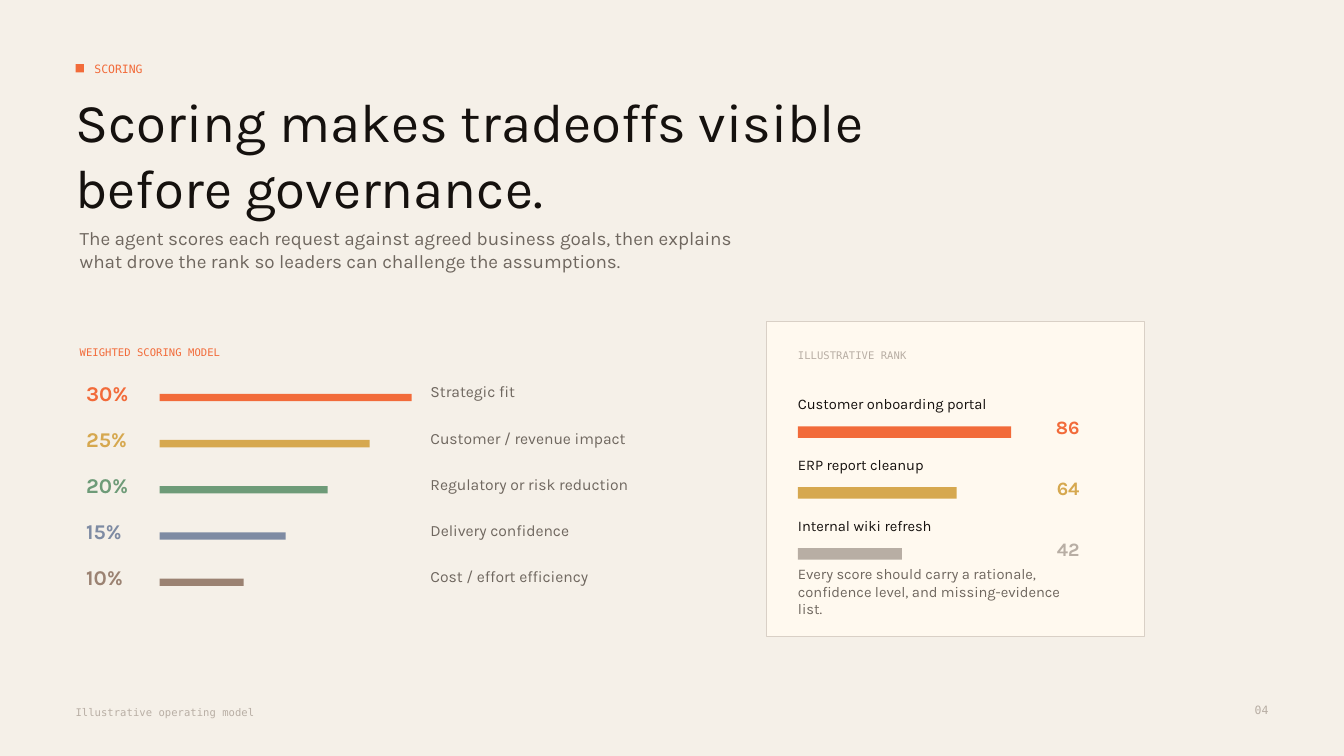
from pptx import Presentation
from pptx.dml.color import RGBColor as RGB
from pptx.enum.shapes import MSO_SHAPE as SHAPE
from pptx.enum.text import MSO_ANCHOR as ANCHOR, PP_ALIGN as ALIGN
from pptx.util import Inches, Pt

WIDTH, HEIGHT = Inches(13.33), Inches(7.5)
COLS, ROWS = 1280, 720
SANS, MONO = "Karla", "DejaVu Sans Mono"
COLORS = {
    "paper": "F5F0E8", "card": "FFF9EF", "edge": "D9D0C6",
    "ink": "15110E", "body": "6F675F", "muted": "B8AEA4",
    "orange": "F26B3A", "gold": "D6A84F", "green": "6E9B78",
    "blue": "7E8BA3", "brown": "9B8272",
}
WEIGHTS = [
    (30, "Strategic fit", "orange"),
    (25, "Customer / revenue impact", "gold"),
    (20, "Regulatory or risk reduction", "green"),
    (15, "Delivery confidence", "blue"),
    (10, "Cost / effort efficiency", "brown"),
]
RANKS = [
    (86, "Customer onboarding portal", "orange"),
    (64, "ERP report cleanup", "gold"),
    (42, "Internal wiki refresh", "muted"),
]


def color(name):
    return RGB.from_string(COLORS[name])


def place(col, row, cols, rows):
    return (int(WIDTH * col / COLS), int(HEIGHT * row / ROWS),
            int(WIDTH * cols / COLS), int(HEIGHT * rows / ROWS))


def add_rect(s, box, fill, edge=None):
    sp = s.shapes.add_shape(SHAPE.RECTANGLE, *place(*box))
    sp.shadow.inherit = False
    sp.fill.solid()
    sp.fill.fore_color.rgb = color(fill)
    if edge:
        sp.line.color.rgb = color(edge)
        sp.line.width = Pt(0.75)
    else:
        sp.line.fill.background()


def add_text(s, box, text, size, fill, font=SANS, bold=False,
             align=ALIGN.LEFT, anchor=ANCHOR.TOP):
    tf = s.shapes.add_textbox(*place(*box)).text_frame
    tf.word_wrap = True
    tf.vertical_anchor = anchor
    tf.margin_left = tf.margin_right = tf.margin_top = tf.margin_bottom = 0
    p = tf.paragraphs[0]
    p.alignment = align
    r = p.add_run()
    r.text = text
    r.font.name = font
    r.font.size = Pt(size)
    r.font.bold = bold
    r.font.color.rgb = color(fill)


def add_header(s):
    add_rect(s, (72, 61, 8, 8), "orange")
    add_text(s, (90, 54, 420, 24), "SCORING", 8.2, "orange", MONO,
             anchor=ANCHOR.MIDDLE)
    add_text(s, (72, 84, 780, 132),
             "Scoring makes tradeoffs visible before governance.", 39, "ink")
    add_text(s, (76, 216, 650, 70),
             "The agent scores each request against agreed business goals, "
             "then explains what drove the rank so leaders can challenge "
             "the assumptions.", 13.5, "body")


def add_weights(s):
    add_text(s, (76, 330, 280, 18), "WEIGHTED SCORING MODEL", 7.5, "orange", MONO)
    for i, (weight, label, fill) in enumerate(WEIGHTS):
        row = 362 + 44 * i
        add_text(s, (82, row, 58, 24), f"{weight}%", 15, fill, bold=True)
        add_rect(s, (152, row + 13, 8 * weight, 7), fill)
        add_text(s, (410, row + 2, 250, 20), label, 11.2, "body")


def add_ranking(s):
    add_rect(s, (730, 306, 360, 300), "card", "edge")
    add_text(s, (760, 332, 180, 18), "ILLUSTRATIVE RANK", 7.5, "muted", MONO)
    for i, (score, label, fill) in enumerate(RANKS):
        row = 376 + 58 * i
        add_text(s, (760, row, 210, 22), label, 10.5, "ink")
        add_rect(s, (760, row + 30, 236 * score / 100, 11), fill)
        add_text(s, (980, row + 20, 48, 22), str(score), 13.5, fill,
                 bold=True, align=ALIGN.RIGHT)
    add_text(s, (760, 538, 270, 52),
             "Every score should carry a rationale, confidence level, "
             "and missing-evidence list.", 10.5, "body")


def add_footer(s):
    add_text(s, (72, 672, 320, 18), "Illustrative operating model", 7.5,
             "muted", MONO)
    add_text(s, (1160, 670, 48, 20), "04", 8.2, "muted", MONO,
             align=ALIGN.RIGHT)


def main():
    prs = Presentation()
    prs.slide_width, prs.slide_height = WIDTH, HEIGHT
    s = prs.slides.add_slide(prs.slide_layouts[6])
    add_rect(s, (0, 0, COLS, ROWS), "paper")
    add_header(s)
    add_weights(s)
    add_ranking(s)
    add_footer(s)
    prs.save("out.pptx")


if __name__ == "__main__":
    main()
